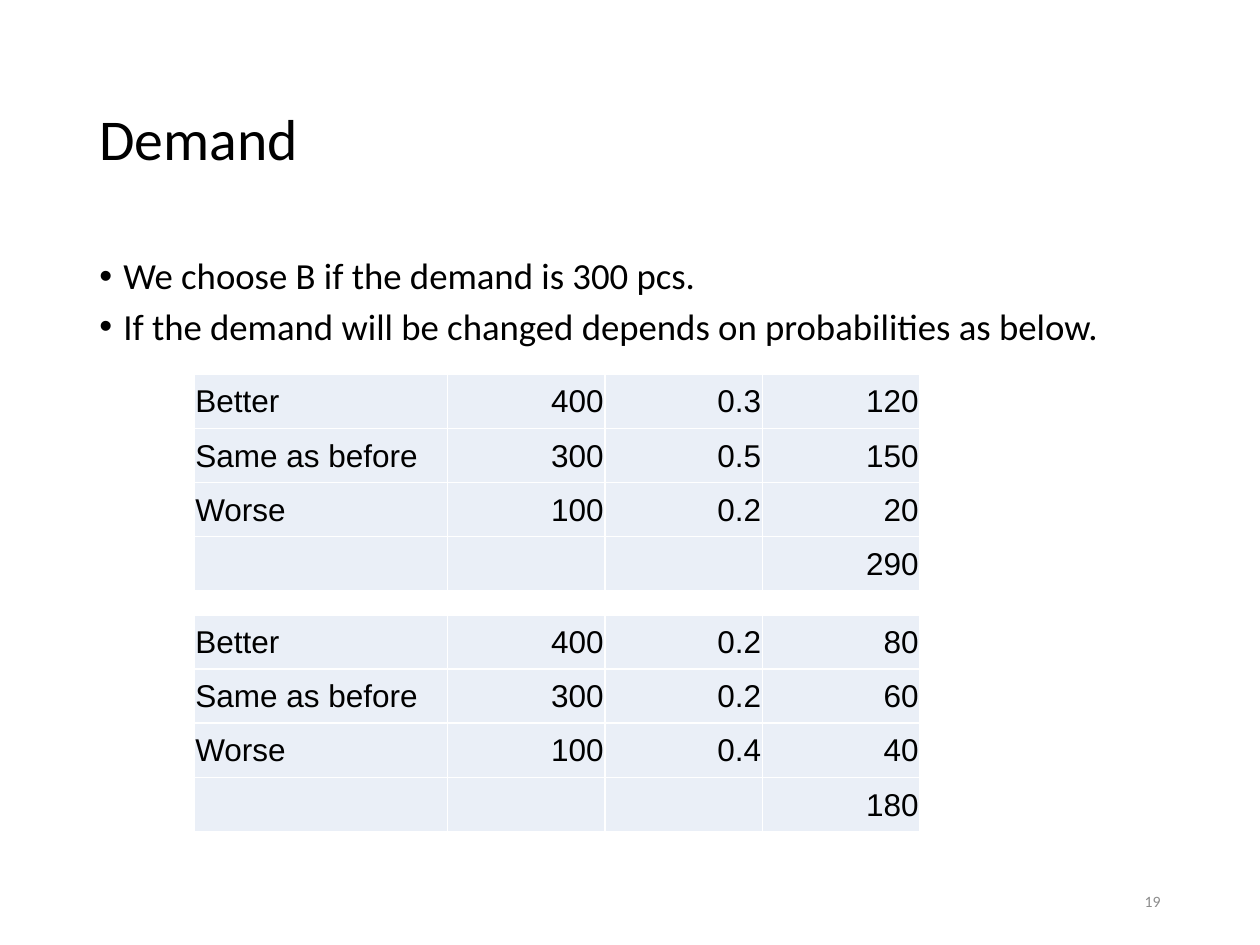
import pptx
import pptx.util
import pptx.dml.color
import pptx.enum.text
import pptx.oxml.ns
import lxml.etree

Inches = pptx.util.Inches
Pt = pptx.util.Pt
ALIGN = pptx.enum.text.PP_ALIGN
ANCHOR = pptx.enum.text.MSO_ANCHOR

BLACK, GREY, WHITE, PALE_BLUE = "000000", "8C8C8C", "FFFFFF", "EAEFF7"

TITLE = "Demand"
BULLETS = [
    "We choose B if the demand is 300 pcs.",
    "If the demand will be changed depends on probabilities as below.",
]
PAGE_NUMBER = "19"
# Outlook, demand, probability, expected demand; the last row is the total.
FORECASTS = [
    [("Better", "400", "0.3", "120"),
     ("Same as before", "300", "0.5", "150"),
     ("Worse", "100", "0.2", "20"),
     ("", "", "", "290")],
    [("Better", "400", "0.2", "80"),
     ("Same as before", "300", "0.2", "60"),
     ("Worse", "100", "0.4", "40"),
     ("", "", "", "180")],
]

MARGIN, CONTENT_WIDTH = 0.69, 8.62
BULLET_TOP, BULLET_HEIGHT = 2, 0.4
TABLE_LEFT, TABLE_TOP, TABLE_PITCH = 1.54, 2.97, 1.91
COLUMN_WIDTHS = [2.01, 1.25, 1.25, 1.25]
ROW_HEIGHT = 0.43


def color(code):
    return pptx.dml.color.RGBColor.from_string(code)


def add_span(para, text, size, font="Calibri", code=BLACK):
    span = para.add_run()
    span.text = text
    span.font.size = Pt(size)
    span.font.name = font
    span.font.color.rgb = color(code)


def add_box(page, left, top, width, height, anchor=ANCHOR.MIDDLE):
    """Add a wrapping text box and return its first paragraph."""
    box = page.shapes.add_textbox(Inches(left), Inches(top), Inches(width), Inches(height))
    box.text_frame.word_wrap = True
    box.text_frame.vertical_anchor = anchor
    return box.text_frame.paragraphs[0]


def add_bullet(para):
    properties = para._p.get_or_add_pPr()
    properties.set("marL", str(Inches(0.19)))
    properties.set("indent", str(Inches(-0.19)))
    for tag, name, value in [("a:buFont", "typeface", "Arial"), ("a:buChar", "char", "•")]:
        lxml.etree.SubElement(properties, pptx.oxml.ns.qn(tag)).set(name, value)


def add_borders(cell, code, points):
    properties = cell._tc.get_or_add_tcPr()
    for side in ("a:lnL", "a:lnR", "a:lnT", "a:lnB"):
        line = lxml.etree.SubElement(properties, pptx.oxml.ns.qn(side), w=str(Pt(points)))
        fill = lxml.etree.SubElement(line, pptx.oxml.ns.qn("a:solidFill"))
        lxml.etree.SubElement(fill, pptx.oxml.ns.qn("a:srgbClr"), val=code)


def add_forecast(page, rows, top):
    table = page.shapes.add_table(
        len(rows), len(COLUMN_WIDTHS), Inches(TABLE_LEFT), Inches(top),
        Inches(sum(COLUMN_WIDTHS)), Inches(ROW_HEIGHT * len(rows))).table
    table.first_row = table.horz_banding = False
    for column, width in zip(table.columns, COLUMN_WIDTHS):
        column.width = Inches(width)
    for row_index, values in enumerate(rows):
        table.rows[row_index].height = Inches(ROW_HEIGHT)
        for column_index, value in enumerate(values):
            cell = table.cell(row_index, column_index)
            add_borders(cell, WHITE, 1)
            cell.fill.solid()
            cell.fill.fore_color.rgb = color(PALE_BLUE)
            cell.vertical_anchor = ANCHOR.MIDDLE
            cell.margin_left = cell.margin_right = cell.margin_top = Inches(0.01)
            cell.margin_bottom = 0
            if value:
                para = cell.text_frame.paragraphs[0]
                para.alignment = ALIGN.RIGHT if column_index else ALIGN.LEFT
                add_span(para, value, 18, "Arial")


def main():
    deck = pptx.Presentation()
    deck.slide_width, deck.slide_height = Inches(10), Inches(7.5)
    page = deck.slides.add_slide(deck.slide_layouts[6])

    title = add_box(page, MARGIN, 0.4, CONTENT_WIDTH, 1.45)
    title.line_spacing = 0.9
    add_span(title, TITLE, 33)

    for index, text in enumerate(BULLETS):
        para = add_box(page, MARGIN, BULLET_TOP + index * BULLET_HEIGHT,
                       CONTENT_WIDTH, BULLET_HEIGHT, ANCHOR.TOP)
        para.line_spacing = 0.9
        para.space_before = Pt(7.5)
        add_bullet(para)
        add_span(para, text, 21)

    for index, rows in enumerate(FORECASTS):
        add_forecast(page, rows, TABLE_TOP + index * TABLE_PITCH)

    number = add_box(page, 7.06, 6.95, 2.25, 0.4)
    number.alignment = ALIGN.RIGHT
    add_span(number, PAGE_NUMBER, 9, code=GREY)

    deck.save("out.pptx")


if __name__ == "__main__":
    main()
